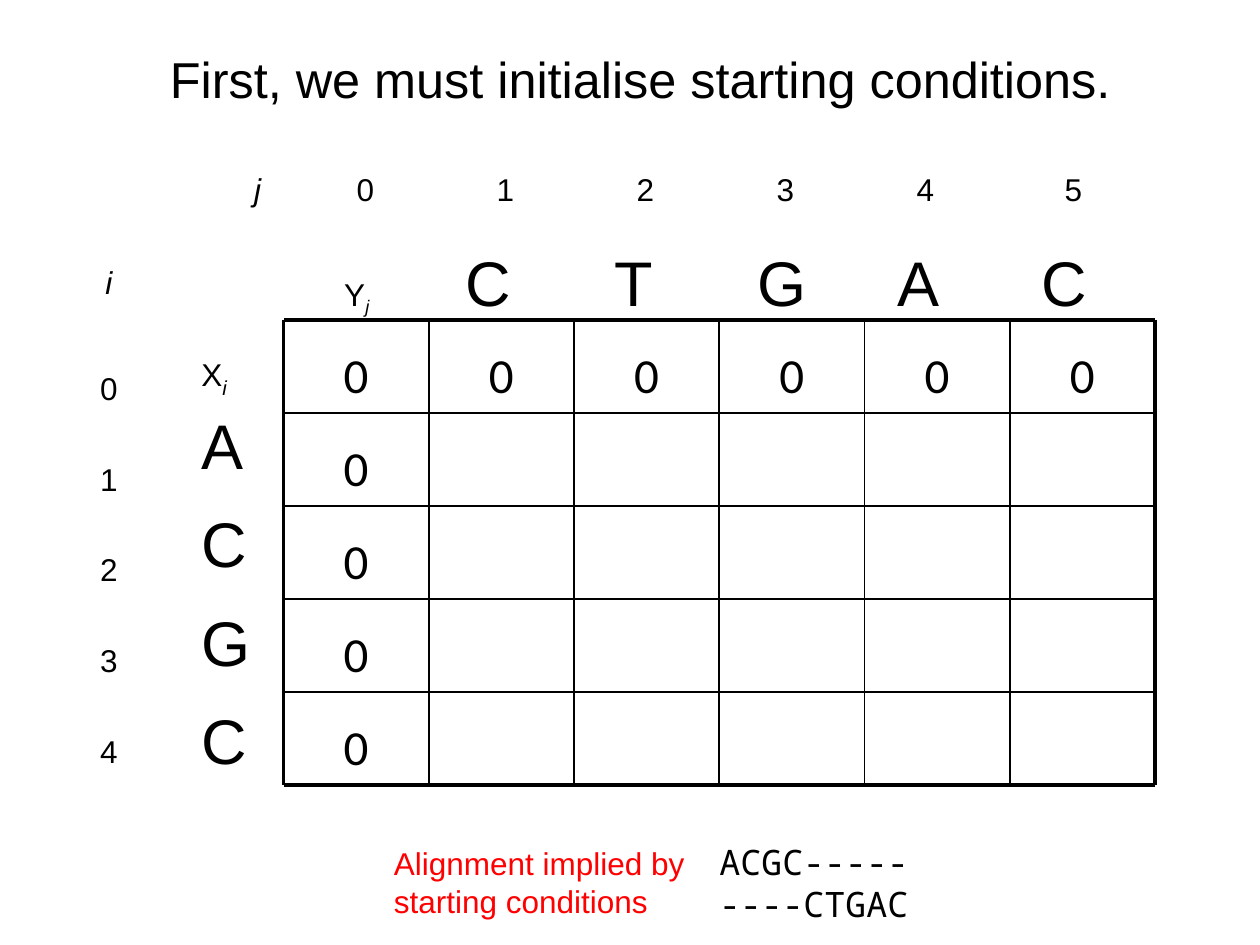
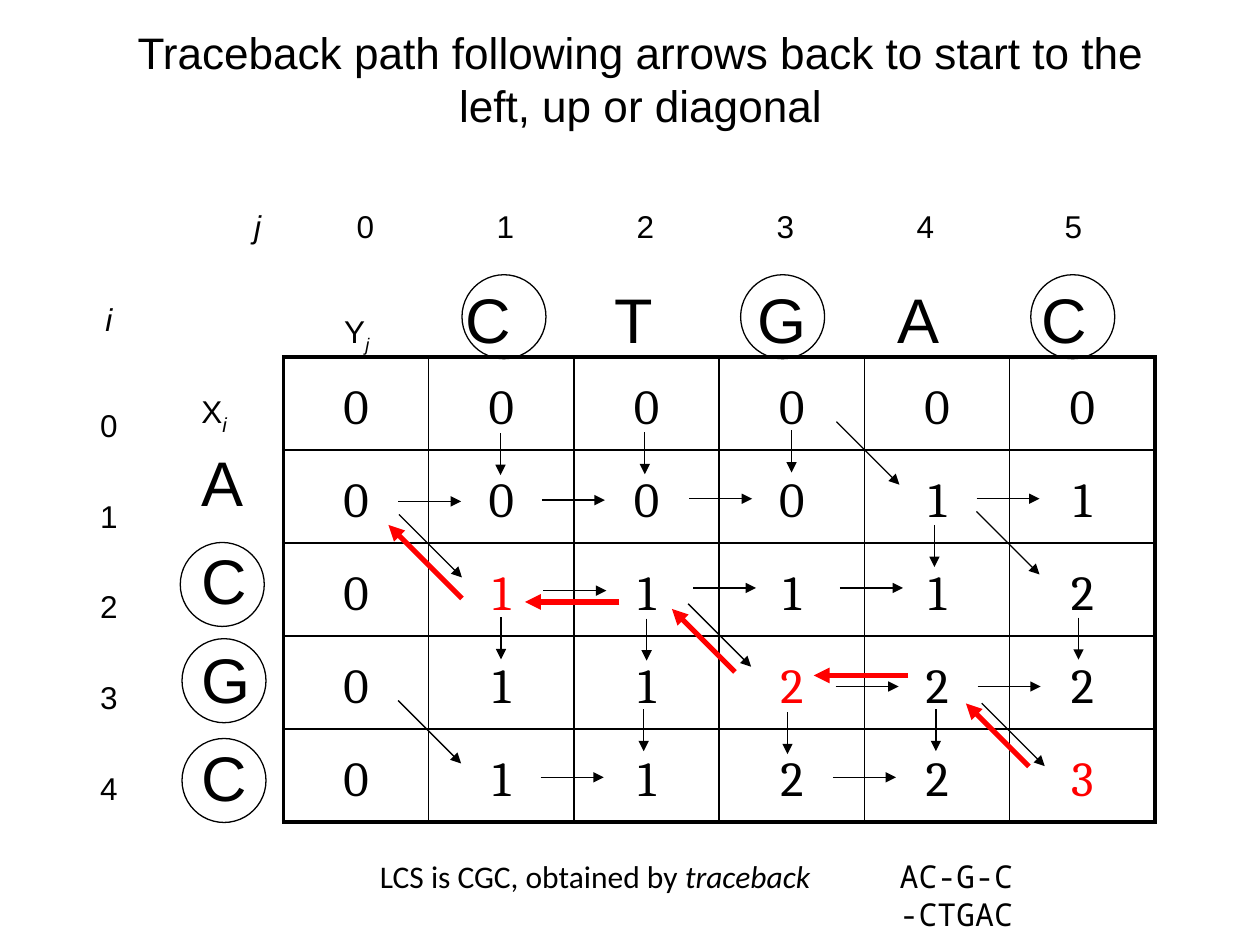
from lxml import etree
from pptx import Presentation
from pptx.dml.color import RGBColor
from pptx.enum.shapes import MSO_CONNECTOR, MSO_SHAPE
from pptx.enum.text import MSO_ANCHOR, MSO_AUTO_SIZE, PP_ALIGN
from pptx.oxml.ns import qn
from pptx.util import Pt

LEFT, CENTER = PP_ALIGN.LEFT, PP_ALIGN.CENTER
MIDDLE, TOP = MSO_ANCHOR.MIDDLE, MSO_ANCHOR.TOP
NO_AUTOFIT = MSO_AUTO_SIZE.NONE
STRAIGHT, OVAL = MSO_CONNECTOR.STRAIGHT, MSO_SHAPE.OVAL

COLORS = {"ink": "000000", "accent": "FF0000"}
SANS, BODY, SERIF, MONO = "Arial", "Calibri", "Cambria", "Noto Sans Mono"
TITLE_ONLY = 5

# Alignment matrix geometry, in points
ACROSS, DOWN = "CTGAC", "ACGC"
COLUMNS, ROWS = len(ACROSS) + 1, len(DOWN) + 1
GRID_LEFT, CELL_WIDTH, CELL_HEIGHT = 162, 83, 53.15
GRID_WIDTH, GRID_HEIGHT = COLUMNS * CELL_WIDTH, ROWS * CELL_HEIGHT
OUTER_LINE, INNER_LINE = 2.25, 1
LETTER_STOPS = (69.3, 154.7, 236.3, 316.2, 398.2)
INDEX_STOPS = (58.6, 138.6, 218.6, 298.6, 378.6, 463.2)
CELL_STYLE = {"size": 28, "align": CENTER, "spacing": 1.3}

# Final matrix values; a star marks a matched cell on the traceback path
FINAL_VALUES = [
    ["0", "0", "0", "0", "0", "0"],
    ["0", "0", "0", "0", "1", "1"],
    ["0", "1*", "1", "1", "1", "2"],
    ["0", "1", "1", "2*", "2", "2"],
    ["0", "1", "1", "2", "2", "3*"],
]

# Start points of the thin arrows, keyed by (dx, dy)
STEP_ARROWS = {
    (36, 0): [(227.5, 286.5), (309.6, 285.8), (393.8, 285), (558, 285),
              (310.5, 337.5), (396, 336), (480, 336), (477.5, 392.3),
              (558.7, 392.3), (309, 444.2), (476, 444.2)],
    (0, 24): [(286, 247.5), (368.5, 247), (452.3, 246), (534, 300),
              (286.3, 352.8), (369.5, 353.5), (616.3, 353), (367.8, 405.3),
              (450, 407), (534.8, 405.3)],
    (36, 36): [(228, 294), (558, 292.3), (478, 241), (393.2, 345),
               (227.5, 400.3), (561, 401.8)],
}
TRACEBACK = [
    ((588, 438), (552, 402)),
    ((519, 386), (465, 386)),
    ((420, 384), (384, 348)),
    ((354, 344), (300, 344)),
    ((264, 342), (222, 300)),
]
MATCH_CIRCLES = [(264, 157), (423.2, 157), (589, 157),
                 (103, 310), (104, 365), (104, 422)]


def rgb(name):
    return RGBColor.from_string(COLORS[name])


def write(paragraph, *runs, font=SANS, size=18, color="ink", align=LEFT,
          spacing=1.0, stops=()):
    """Fill a paragraph; a run is a string or (string, overrides)."""
    paragraph.alignment = align
    paragraph.line_spacing = spacing
    if stops:
        properties = paragraph._p.get_or_add_pPr()
        tabs = etree.SubElement(properties, qn("a:tabLst"))
        for stop in stops:
            etree.SubElement(tabs, qn("a:tab"), pos=str(Pt(stop)), algn="l")
    for item in runs:
        text, changes = (item, {}) if isinstance(item, str) else item
        run = paragraph.add_run()
        run.text = text
        run.font.name = font
        run.font.size = Pt(changes.get("size", size))
        run.font.italic = changes.get("italic", False)
        run.font.color.rgb = rgb(color)
        if changes.get("subscript"):
            run._r.get_or_add_rPr().set("baseline", "-25000")


def add_text(slide, left, top, width, height, *lines, inset=7.2, **style):
    """Add a text box; a line is (runs, paragraph overrides)."""
    box = slide.shapes.add_textbox(Pt(left), Pt(top), Pt(width), Pt(height))
    frame = box.text_frame
    frame.word_wrap = True
    frame.margin_left = frame.margin_right = Pt(inset)
    for number, (runs, changes) in enumerate(lines):
        paragraph = frame.add_paragraph() if number else frame.paragraphs[0]
        write(paragraph, *runs, **{**style, **changes})


def add_slide(deck, title, size):
    slide = deck.slides.add_slide(deck.slide_layouts[TITLE_ONLY])
    heading = slide.shapes.title
    heading.left, heading.top = Pt(60), Pt(24)
    heading.width, heading.height = Pt(612), Pt(42)
    frame = heading.text_frame
    frame.auto_size, frame.vertical_anchor = NO_AUTOFIT, MIDDLE
    frame.word_wrap = True
    write(frame.paragraphs[0], title, size=size, align=CENTER)
    return slide


def add_sequence_labels(slide, grid_top):
    italic = {"italic": True}
    # Column indices and the sequence across
    indices = "".join(f"\t{n}" for n in range(COLUMNS))
    add_text(slide, 145.2, grid_top - 87, 515, 26.6,
             ([("j", italic), indices], {}),
             inset=0, spacing=0.9, stops=INDEX_STOPS)
    letters = "".join(f"\t{letter}" for letter in ACROSS)
    add_text(slide, 196.7, grid_top - 60.4, 445, 63,
             (["Y", ("j", {"italic": True, "subscript": True}),
               (letters, {"size": 36})], {}),
             inset=0, spacing=1.3, stops=LETTER_STOPS)

    # Row indices and the sequence down
    rows = [([str(n)], {"spacing": 2.4 if n else 2.8}) for n in range(ROWS)]
    add_text(slide, 42, grid_top - 66.2, 40.3, 327,
             ([("i", italic)], {}), *rows, align=CENTER, spacing=2.4)
    residues = [([letter], {"size": 36, "spacing": 1.3 if n else 1.1})
                for n, letter in enumerate(DOWN)]
    subscript = {"size": 20, "italic": True, "subscript": True}
    add_text(slide, 108, grid_top + 6.2, 40.3, 261,
             (["X", ("i", subscript)], {}), *residues, spacing=1.3)


def add_line(slide, start, end, color="ink", width=0.75, arrow=False):
    line = slide.shapes.add_connector(
        STRAIGHT, *(Pt(value) for value in (*start, *end)))
    line.line.color.rgb = rgb(color)
    line.line.width = Pt(width)
    if arrow:
        etree.SubElement(line.line._get_or_add_ln(), qn("a:tailEnd"),
                         type="triangle")
    etree.SubElement(line._element.spPr, qn("a:effectLst"))


def add_empty_matrix(slide, grid_top):
    """Draw the ruled grid with zeros in its first row and column only."""
    for r in range(ROWS):
        for c in range(COLUMNS if r == 0 else 1):
            add_text(slide, GRID_LEFT + c * CELL_WIDTH,
                     grid_top + r * CELL_HEIGHT + 0.5, CELL_WIDTH, CELL_HEIGHT,
                     (["0"], {}), font=BODY, **CELL_STYLE)
    right, bottom = GRID_LEFT + GRID_WIDTH, grid_top + GRID_HEIGHT
    for r in range(ROWS + 1):
        y = grid_top + r * CELL_HEIGHT
        add_line(slide, (GRID_LEFT, y), (right, y),
                 width=OUTER_LINE if r in (0, ROWS) else INNER_LINE)
    for c in range(COLUMNS + 1):
        x = GRID_LEFT + c * CELL_WIDTH
        add_line(slide, (x, grid_top), (x, bottom),
                 width=OUTER_LINE if c in (0, COLUMNS) else INNER_LINE)


def set_border(cell, side, width):
    line = etree.SubElement(cell._tc.get_or_add_tcPr(), qn(f"a:ln{side}"),
                            w=str(Pt(width)))
    fill = etree.SubElement(line, qn("a:solidFill"))
    etree.SubElement(fill, qn("a:srgbClr"), val=COLORS["ink"])


def add_filled_matrix(slide, grid_top):
    matrix = slide.shapes.add_table(
        ROWS, COLUMNS, Pt(GRID_LEFT), Pt(grid_top),
        Pt(GRID_WIDTH), Pt(GRID_HEIGHT)).table
    matrix.first_row = matrix.horz_banding = False
    for column in matrix.columns:
        column.width = Pt(CELL_WIDTH)
    for r, row in enumerate(matrix.rows):
        row.height = Pt(CELL_HEIGHT)
        for c, cell in enumerate(row.cells):
            outer_sides = {"L": c == 0, "R": c == COLUMNS - 1,
                           "T": r == 0, "B": r == ROWS - 1}
            for side, is_outer in outer_sides.items():
                set_border(cell, side, OUTER_LINE if is_outer else INNER_LINE)
            cell.fill.background()
            cell.vertical_anchor = TOP
            value = FINAL_VALUES[r][c]
            write(cell.text_frame.paragraphs[0], value.rstrip("*"), font=SERIF,
                  color="accent" if value.endswith("*") else "ink", **CELL_STYLE)


def add_circle(slide, left, top, diameter=48):
    circle = slide.shapes.add_shape(OVAL, Pt(left), Pt(top),
                                    Pt(diameter), Pt(diameter))
    circle.shadow.inherit = False
    circle.fill.background()
    circle.line.color.rgb = rgb("ink")
    circle.line.width = Pt(0.75)


def build_initialisation(deck):
    slide = add_slide(deck, "First, we must initialise starting conditions.", 28.8)
    grid_top = 182.8
    add_sequence_labels(slide, grid_top)
    add_empty_matrix(slide, grid_top)

    # Implied alignment
    add_text(slide, 218, 479, 192, 50,
             (["Alignment implied by starting conditions"], {}), color="accent")
    add_text(slide, 404, 476.5, 144, 55,
             (["ACGC-----"], {}), (["----CTGAC"], {}), font=MONO, size=20)


def build_traceback(deck):
    slide = add_slide(deck, "Traceback path following arrows back to start "
                            "to the left, up or diagonal", 25.2)
    grid_top = 204
    add_sequence_labels(slide, grid_top)
    add_filled_matrix(slide, grid_top)

    # Scoring steps, matched letters and the path back
    for (dx, dy), starts in STEP_ARROWS.items():
        for x, y in starts:
            add_line(slide, (x, y), (x + dx, y + dy), arrow=True)
    for left, top in MATCH_CIRCLES:
        add_circle(slide, left, top)
    for start, end in TRACEBACK:
        add_line(slide, start, end, "accent", 3, arrow=True)

    # Resulting alignment
    add_text(slide, 210, 486, 402, 36,
             (["LCS is CGC, obtained by ", ("traceback", {"italic": True})], {}),
             font=BODY)
    add_text(slide, 507, 486, 153, 51,
             (["AC-G-C"], {}), (["-CTGAC"], {}), font=MONO)


def main():
    deck = Presentation()
    deck.slide_width, deck.slide_height = Pt(720), Pt(540)
    build_initialisation(deck)
    build_traceback(deck)
    deck.save("out.pptx")


if __name__ == "__main__":
    main()
